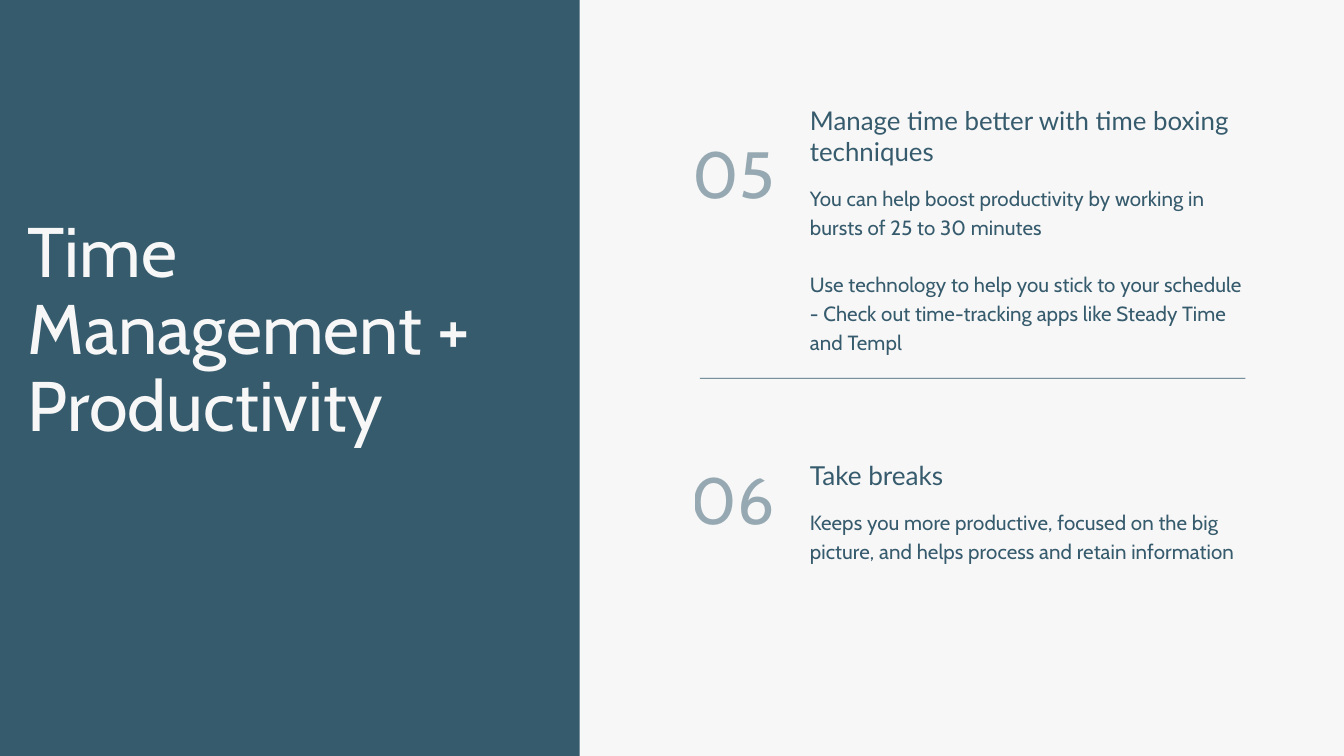
from dataclasses import dataclass

from lxml import etree
from pptx import Presentation
from pptx import util as u
from pptx.dml.color import RGBColor
from pptx.enum import shapes, text
from pptx.oxml import ns

PX = 9525
COLORS = {"teal": "365B6D", "paper": "F7F7F7"}
TITLE_ONLY = 5
BODY_X, BODY_WIDTH = 1157, 622
NUMBER_X, NUMBER_WIDTH, NUMBER_HEIGHT = 960, 147, 106


@dataclass(frozen=True)
class Box:
    x: int
    y: int
    width: int
    height: int

    def emu(self) -> tuple[int, ...]:
        return tuple(v * PX for v in (self.x, self.y, self.width, self.height))


@dataclass(frozen=True)
class Style:
    font: str
    size: float
    leading: float
    color: str = "teal"
    tracking: int = 0
    opacity: int = 100
    align: text.PP_ALIGN = text.PP_ALIGN.LEFT


@dataclass(frozen=True)
class Tip:
    number: str
    number_y: int
    heading: str
    heading_style: Style
    heading_y: int
    heading_height: int
    details: tuple[str, ...]
    details_y: int
    details_height: int


TITLE = Style("Cabin", 75.2, 82.7, color="paper")
DETAIL = Style("Cabin", 22, 30.8, tracking=10)
NUMBER = Style("Cabin", 70, 77, tracking=30, opacity=50, align=text.PP_ALIGN.RIGHT)

TIPS = (
    Tip(
        "05", 199,
        "Manage time better with time boxing techniques", Style("Lato", 27.7, 33.2), 150, 87,
        (
            "You can help boost productivity by working in bursts of 25 to 30 minutes",
            "Use technology to help you stick to your schedule - "
            "Check out time-tracking apps like Steady Time and Templ",
        ),
        260, 279,
    ),
    Tip(
        "06", 665,
        "Take breaks", Style("Lato", 28, 33.6), 657, 44,
        (
            "Keeps you more productive, focused on the big picture, "
            "and helps process and retain information",
        ),
        723, 118,
    ),
)


def rgb(name: str) -> RGBColor:
    return RGBColor.from_string(COLORS[name])


def write(frame, paragraphs: tuple[str, ...], style: Style) -> None:
    frame.word_wrap = True
    frame.auto_size = text.MSO_AUTO_SIZE.NONE
    frame.vertical_anchor = text.MSO_ANCHOR.TOP
    frame.margin_left = frame.margin_top = frame.margin_right = frame.margin_bottom = 0
    for index, words in enumerate(paragraphs):
        paragraph = frame.add_paragraph() if index else frame.paragraphs[0]
        paragraph.alignment = style.align
        paragraph.line_spacing = u.Pt(style.leading)
        paragraph.space_before = u.Pt(style.leading if index else 0)
        run = paragraph.add_run()
        run.text = words
        run.font.name = style.font
        run.font.size = u.Pt(style.size)
        run.font.color.rgb = rgb(style.color)
        properties = run.font._element
        if style.tracking:
            properties.set("spc", str(style.tracking))
        if style.opacity < 100:
            color = properties.find(".//" + ns.qn("a:srgbClr"))
            etree.SubElement(color, ns.qn("a:alpha"), val=str(style.opacity * 1000))


def add_text(slide, box: Box, paragraphs: tuple[str, ...], style: Style) -> None:
    write(slide.shapes.add_textbox(*box.emu()).text_frame, paragraphs, style)


def add_block(slide, box: Box) -> None:
    block = slide.shapes.add_shape(shapes.MSO_SHAPE.RECTANGLE, *box.emu())
    block.shadow.inherit = False
    block.fill.solid()
    block.fill.fore_color.rgb = rgb("teal")
    block.line.fill.background()


def place_title(slide, box: Box, words: str) -> None:
    title = slide.shapes.title
    title.left, title.top, title.width, title.height = box.emu()
    write(title.text_frame, (words,), TITLE)
    slide.shapes._spTree.append(title._element)


def add_tip(slide, tip: Tip) -> None:
    add_text(slide, Box(BODY_X, tip.heading_y, BODY_WIDTH, tip.heading_height),
             (tip.heading,), tip.heading_style)
    add_text(slide, Box(BODY_X, tip.details_y, BODY_WIDTH, tip.details_height),
             tip.details, DETAIL)
    add_text(slide, Box(NUMBER_X, tip.number_y, NUMBER_WIDTH, NUMBER_HEIGHT),
             (tip.number,), NUMBER)


def main() -> None:
    deck = Presentation()
    deck.slide_width, deck.slide_height = 1920 * PX, 1080 * PX
    slide = deck.slides.add_slide(deck.slide_layouts[TITLE_ONLY])
    slide.background.fill.solid()
    slide.background.fill.fore_color.rgb = rgb("paper")

    divider = Box(1000, 540, 779, 1)
    title_panel = Box(0, 0, 828, 1080)
    for box in (divider, title_panel):
        add_block(slide, box)
    place_title(slide, Box(40, 306, 747, 443), "Time Management + Productivity")
    for tip in TIPS:
        add_tip(slide, tip)
    deck.save("out.pptx")


if __name__ == "__main__":
    main()
